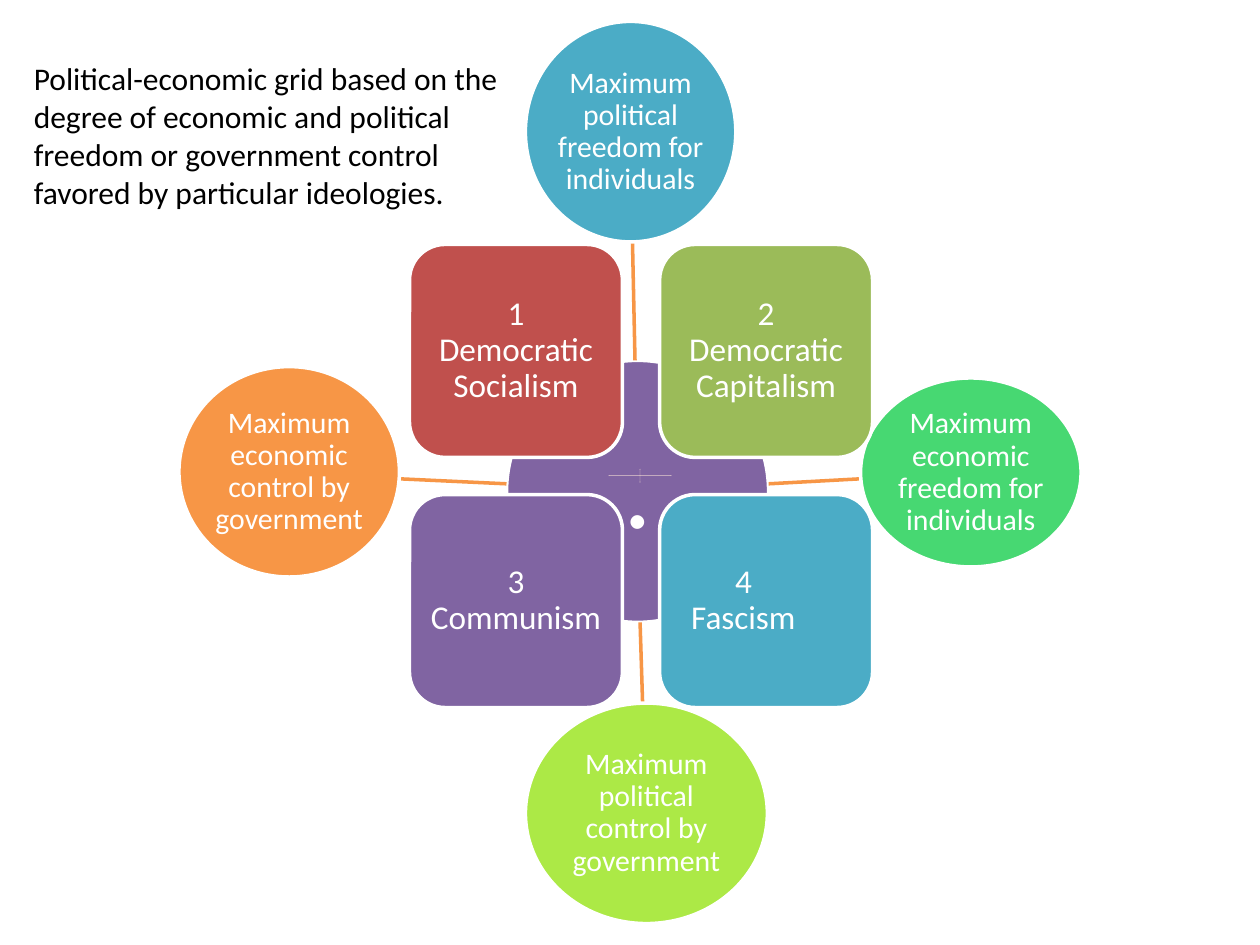
"""Build a slide with a political-economic grid of four ideologies."""
import lxml.etree
import pptx
import pptx.dml.color
import pptx.enum.shapes
import pptx.enum.text
import pptx.oxml.ns
import pptx.util

Inches = pptx.util.Inches
Pt = pptx.util.Pt
RGBColor = pptx.dml.color.RGBColor
SHAPE = pptx.enum.shapes.MSO_SHAPE
FONT = "Calibri"
WHITE = RGBColor(0xFF, 0xFF, 0xFF)
BLACK = RGBColor(0x00, 0x00, 0x00)
PURPLE = RGBColor(0x80, 0x64, 0xA2)
TEAL = RGBColor(0x4B, 0xAC, 0xC6)
GREEN = RGBColor(0x47, 0xD8, 0x72)
LIME = RGBColor(0xAC, 0xE9, 0x46)
ORANGE = RGBColor(0xF7, 0x96, 0x46)
RED = RGBColor(0xC0, 0x50, 0x4D)
OLIVE = RGBColor(0x9B, 0xBB, 0x59)
PINK = RGBColor(0xE8, 0xD0, 0xD0)

SPOKES = [
    ("Maximum political freedom for individuals", TEAL,
     (4.17, 0.17, 1.67, 1.75), (5.04, 2.86, 5.02, 1.92)),
    ("Maximum economic freedom for individuals", GREEN,
     (6.83, 3, 1.75, 1.5), (6.1, 3.84, 6.83, 3.8)),
    ("Maximum political control by government", LIME,
     (4.17, 5.58, 1.92, 1.75), (5.08, 4.94, 5.1, 5.58)),
    ("Maximum economic control by government", ORANGE,
     (1.42, 2.91, 1.75, 1.67), (4.02, 3.84, 3.17, 3.8)),
]
IDEOLOGIES = [
    (["1 Democratic Socialism"], RED),
    (["2 Democratic Capitalism"], OLIVE),
    (["3 Communism"], PURPLE),
    (["4", "Fascism"], TEAL),
]
GRID_LEFT, GRID_TOP = 3.25, 1.94
TILE_SIZE, TILE_STEP = 1.69, 1.985


def add_run(para, text, size, color):
    """Add one formatted run to a paragraph."""
    span = para.add_run()
    span.text = text
    span.font.name = FONT
    span.font.size = Pt(size)
    span.font.color.rgb = color


def add_filled_shape(slide, kind, place, fill, outlined=True):
    """Add a flat preset shape, with a white outline if wanted."""
    shape = slide.shapes.add_shape(kind, *map(Inches, place))
    shape.shadow.inherit = False
    shape.fill.solid()
    shape.fill.fore_color.rgb = fill
    if outlined:
        shape.line.color.rgb = WHITE
        shape.line.width = Pt(2)
    else:
        shape.line.fill.background()
    return shape


def add_label(shape, lines, size, margin):
    """Write centred white lines inside a shape and return its paragraphs."""
    frame = shape.text_frame
    frame.word_wrap = True
    frame.vertical_anchor = pptx.enum.text.MSO_ANCHOR.MIDDLE
    frame.margin_left = frame.margin_right = Inches(margin)
    frame.margin_top = frame.margin_bottom = Inches(margin)
    for index, line in enumerate(lines):
        para = frame.add_paragraph() if index else frame.paragraphs[0]
        para.alignment = pptx.enum.text.PP_ALIGN.CENTER
        para.line_spacing = 0.9
        para.space_after = Pt(0)
        add_run(para, line, size, WHITE)
    return frame.paragraphs


def add_spoke_line(slide, ends):
    """Draw an orange line from the hub to an outer circle."""
    line = slide.shapes.add_connector(
        pptx.enum.shapes.MSO_CONNECTOR.STRAIGHT, *map(Inches, ends))
    line.line.color.rgb = ORANGE
    line.line.width = Pt(2)
    lxml.etree.SubElement(line._element.spPr, pptx.oxml.ns.qn("a:effectLst"))


def add_hub(slide):
    """Add the central circle with its large dot."""
    hub = add_filled_shape(slide, SHAPE.OVAL, (4.02, 2.86, 2.08, 2.08), PURPLE)
    add_label(hub, ["."], 65, 0.05)


def add_spokes(slide):
    """Add the four outer circles and the lines leading to them."""
    for text, fill, place, ends in SPOKES:
        add_spoke_line(slide, ends)
        circle = add_filled_shape(slide, SHAPE.OVAL, place, fill)
        add_label(circle, [text], 17, 0.01)


def add_axes(slide):
    """Add the tiny four-way arrow at the centre."""
    axes = add_filled_shape(slide, SHAPE.QUAD_ARROW, (4.83, 3.72, 0.5, 0.11),
                            PINK, outlined=False)
    for index, value in enumerate((0.02, 0.04, 0.05)):
        axes.adjustments[index] = value


def add_ideologies(slide):
    """Add the two-by-two grid of ideology tiles."""
    for index, (lines, fill) in enumerate(IDEOLOGIES):
        row, column = divmod(index, 2)
        place = (GRID_LEFT + column * TILE_STEP, GRID_TOP + row * TILE_STEP,
                 TILE_SIZE, TILE_SIZE)
        tile = add_filled_shape(slide, SHAPE.ROUNDED_RECTANGLE, place, fill)
        paras = add_label(tile, lines, 19, 0.08)
        if len(paras) > 1:
            paras[0]._p.get_or_add_pPr().set("marR", str(Inches(0.36)))


def add_caption(slide):
    """Add the explanatory text at the top left."""
    box = slide.shapes.add_textbox(*map(Inches, (0.17, 0.42, 3.92, 1.31)))
    box.text_frame.word_wrap = True
    add_run(box.text_frame.paragraphs[0],
            "Political-economic grid based on the degree of economic and "
            "political freedom or government control favored by particular "
            "ideologies.", 18, BLACK)


def main():
    """Create and save the deck."""
    deck = pptx.Presentation()
    deck.slide_width, deck.slide_height = Inches(10), Inches(7.5)
    slide = deck.slides.add_slide(deck.slide_layouts[6])
    add_hub(slide)
    add_spokes(slide)
    add_axes(slide)
    add_ideologies(slide)
    add_caption(slide)
    deck.save("out.pptx")


if __name__ == "__main__":
    main()
